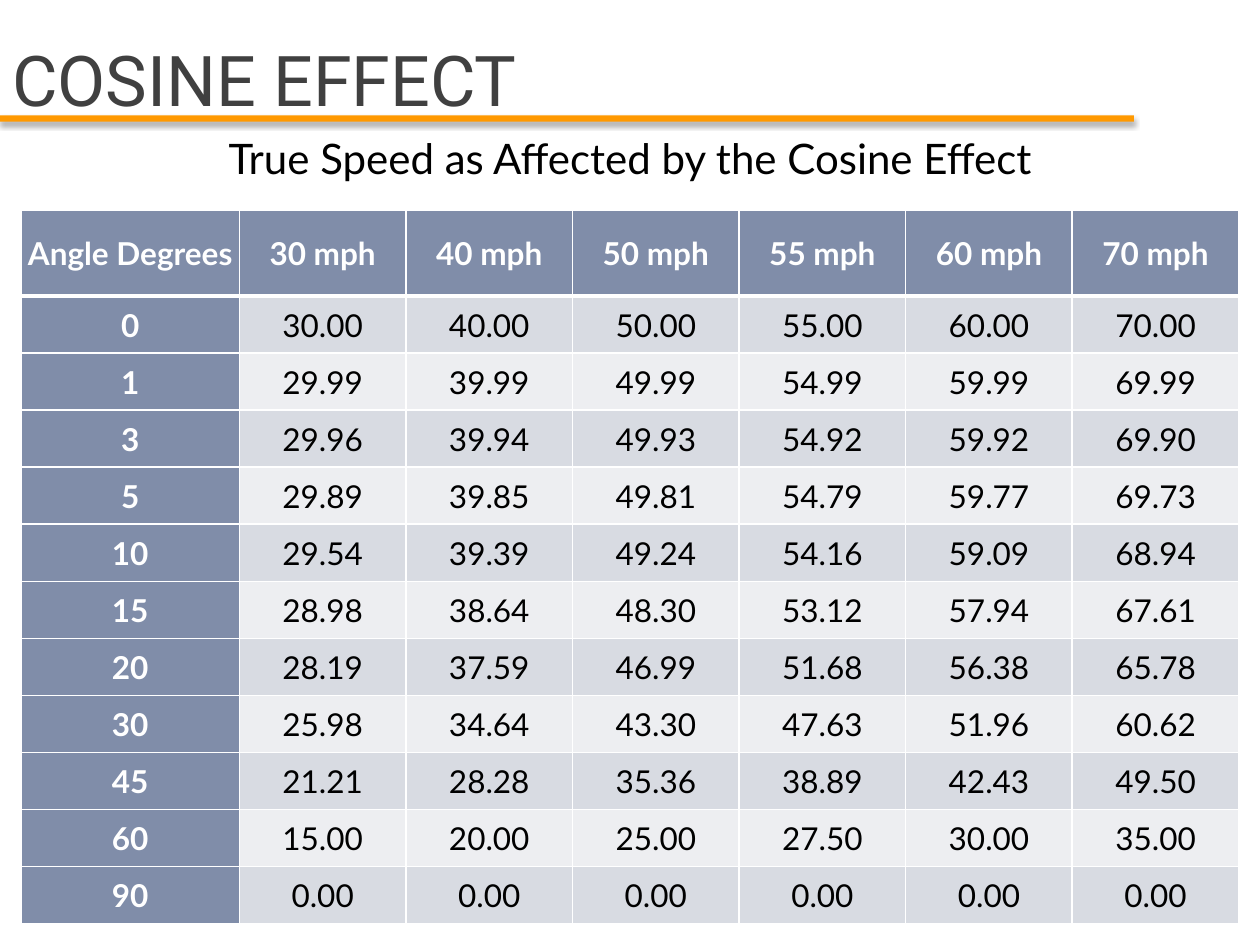
from lxml import etree
from pptx import Presentation
from pptx.dml.color import RGBColor
from pptx.enum.shapes import MSO_SHAPE
from pptx.enum.text import MSO_ANCHOR, PP_ALIGN
from pptx.oxml.ns import qn
from pptx.util import Inches, Pt

RECTANGLE = MSO_SHAPE.RECTANGLE
MIDDLE, TOP = MSO_ANCHOR.MIDDLE, MSO_ANCHOR.TOP
LEFT, CENTER = PP_ALIGN.LEFT, PP_ALIGN.CENTER

COLORS = {
    "title": "404040",
    "accent": "FF9900",
    "heading": "808DA9",
    "dark band": "D8DBE2",
    "light band": "EDEEF1",
    "white": "FFFFFF",
    "black": "000000",
}
SPEEDS = [30, 40, 50, 55, 60, 70]
TRUE_SPEEDS = {
    0: [30, 40, 50, 55, 60, 70],
    1: [29.99, 39.99, 49.99, 54.99, 59.99, 69.99],
    3: [29.96, 39.94, 49.93, 54.92, 59.92, 69.90],
    5: [29.89, 39.85, 49.81, 54.79, 59.77, 69.73],
    10: [29.54, 39.39, 49.24, 54.16, 59.09, 68.94],
    15: [28.98, 38.64, 48.30, 53.12, 57.94, 67.61],
    20: [28.19, 37.59, 46.99, 51.68, 56.38, 65.78],
    30: [25.98, 34.64, 43.30, 47.63, 51.96, 60.62],
    45: [21.21, 28.28, 35.36, 38.89, 42.43, 49.50],
    60: [15, 20, 25, 27.50, 30, 35],
    90: [0, 0, 0, 0, 0, 0],
}


class SlideBuilder:
    """Places styled elements on a grid of 60 columns by 45 rows."""

    title_font, body_font = "Roboto", "Lato"
    cell_inset = Inches(0.01)

    def __init__(self, presentation):
        self.slide = presentation.slides.add_slide(presentation.slide_layouts[6])
        self.column = presentation.slide_width / 60
        self.row = presentation.slide_height / 45

    def place(self, left, top, width, height):
        return (round(left * self.column), round(top * self.row),
                round(width * self.column), round(height * self.row))

    def color(self, name):
        return RGBColor.from_string(COLORS[name])

    def fill_paragraph(self, paragraph, text, size, color, font, align, bold=False):
        run = paragraph.add_run()
        run.text = text
        paragraph.alignment = align
        paragraph.font.size = Pt(size)
        paragraph.font.name = font
        paragraph.font.bold = bold
        paragraph.font.color.rgb = self.color(color)
        return run

    def add_shadow(self, properties):
        effects = etree.SubElement(properties, qn("a:effectLst"))
        shadow = etree.SubElement(
            effects, qn("a:outerShdw"), blurRad=str(Pt(3.1)), dist=str(Pt(1.8)),
            dir="5400000", rotWithShape="0")
        color = etree.SubElement(shadow, qn("a:srgbClr"), val=COLORS["black"])
        etree.SubElement(color, qn("a:alpha"), val="35000")

    def bar(self, area, color):
        shape = self.slide.shapes.add_shape(RECTANGLE, *self.place(*area))
        shape.fill.solid()
        shape.fill.fore_color.rgb = self.color(color)
        shape.line.fill.background()
        self.add_shadow(shape._element.spPr)

    def text(self, area, text, size, color, font, align=LEFT, anchor=TOP, shadow=False):
        frame = self.slide.shapes.add_textbox(*self.place(*area)).text_frame
        frame.word_wrap = True
        frame.vertical_anchor = anchor
        run = self.fill_paragraph(frame.paragraphs[0], text, size, color, font, align)
        if shadow:
            self.add_shadow(run._r.get_or_add_rPr())

    def cell(self, cell, text, fill, color, bold, top_border, bottom_border):
        properties = cell._tc.get_or_add_tcPr()
        borders = {"lnL": 1, "lnR": 1, "lnT": top_border, "lnB": bottom_border}
        for side, width in borders.items():
            line = etree.SubElement(properties, qn(f"a:{side}"), w=str(Pt(width)))
            solid = etree.SubElement(line, qn("a:solidFill"))
            etree.SubElement(solid, qn("a:srgbClr"), val=COLORS["white"])
        cell.fill.solid()
        cell.fill.fore_color.rgb = self.color(fill)
        cell.vertical_anchor = MIDDLE
        cell.margin_left = cell.margin_right = cell.margin_top = self.cell_inset
        cell.margin_bottom = 0
        self.fill_paragraph(cell.text_frame.paragraphs[0], text, 18, color,
                            self.body_font, CENTER, bold)

    def table(self, area, rows, first_width, first_height):
        """Draw rows with a heading row and a heading column of their own sizes."""
        row_count, column_count = len(rows), len(rows[0])
        table = self.slide.shapes.add_table(
            row_count, column_count, *self.place(*area)).table
        other_width = (area[2] - first_width) / (column_count - 1)
        other_height = (area[3] - first_height) / (row_count - 1)
        for index, column in enumerate(table.columns):
            column.width = round(self.column * (other_width if index else first_width))
        for index, row in enumerate(table.rows):
            row.height = round(self.row * (other_height if index else first_height))
        for row_index, texts in enumerate(rows):
            band = "dark band" if row_index % 2 else "light band"
            for column_index, text in enumerate(texts):
                heading = row_index == 0 or column_index == 0
                self.cell(
                    table.cell(row_index, column_index), text,
                    fill="heading" if heading else band,
                    color="white" if heading else "black",
                    bold=heading,
                    top_border=3 if row_index == 1 else 1,
                    bottom_border=3 if row_index == 0 else 1)


def main():
    presentation = Presentation()
    presentation.slide_width, presentation.slide_height = Inches(10), Inches(7.5)
    builder = SlideBuilder(presentation)

    builder.bar((0, 5.5, 54, 0.3), "accent")
    builder.text((0, 2, 54, 3.5), "COSINE EFFECT", 40, "title", builder.title_font,
                 anchor=MIDDLE, shadow=True)
    rows = [["Angle Degrees"] + [f"{speed} mph" for speed in SPEEDS]]
    rows += [[str(angle)] + [f"{value:.2f}" for value in values]
             for angle, values in TRUE_SPEEDS.items()]
    builder.table((1, 10, 58, 34), rows, first_width=10.4, first_height=4.1)
    builder.text((3, 6, 54, 3), "True Speed as Affected by the Cosine Effect", 24,
                 "black", builder.body_font, align=CENTER)

    presentation.save("out.pptx")


if __name__ == "__main__":
    main()
